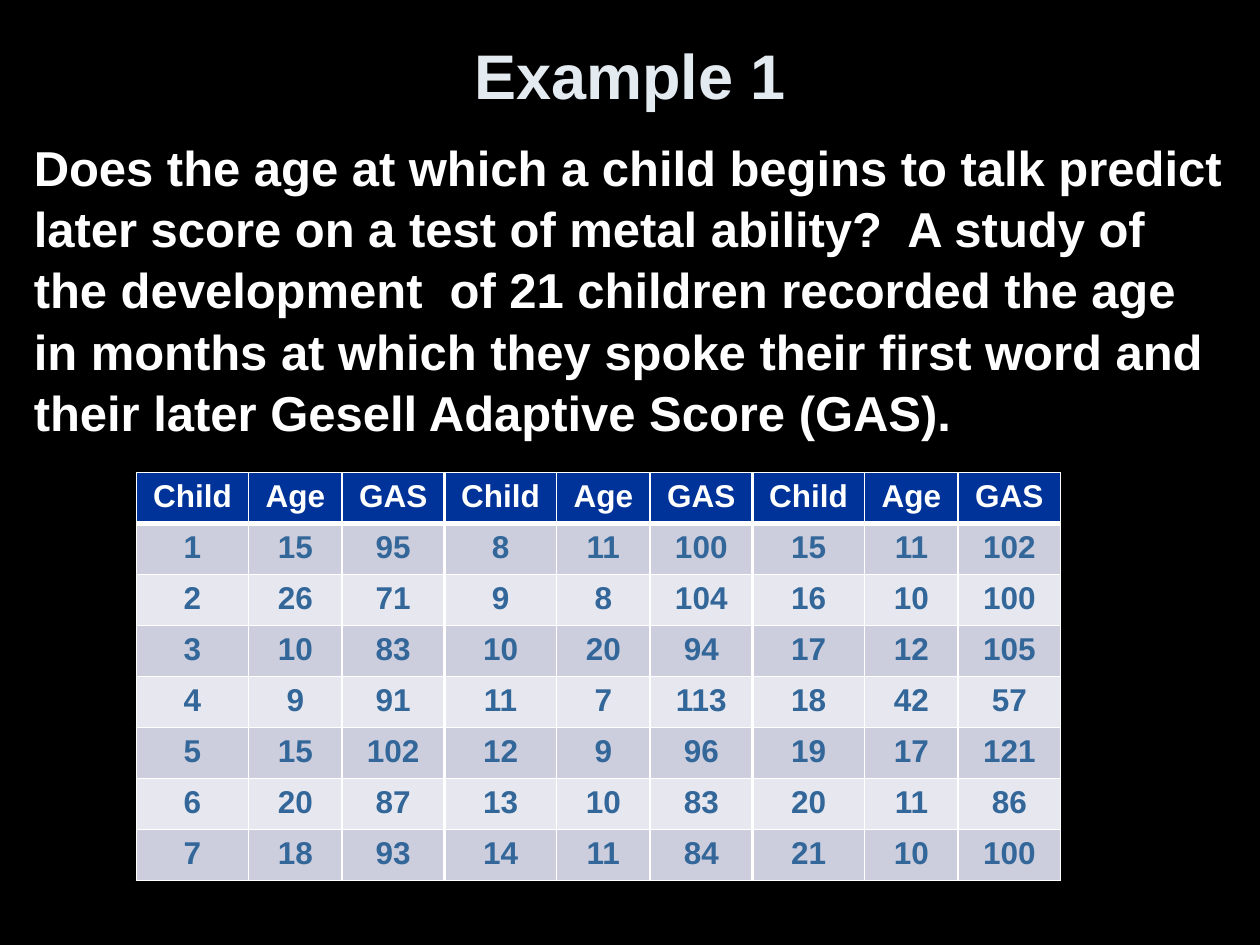
import dataclasses

import lxml.etree
import pptx
import pptx.dml.color
import pptx.enum.text
import pptx.oxml.ns
import pptx.util

Pt = pptx.util.Pt
Align = pptx.enum.text.PP_ALIGN
Anchor = pptx.enum.text.MSO_ANCHOR

WHITE = "FFFFFF"
HEADER_FILL = "003399"
NUMBER_COLOR = "336699"
BAND_FILLS = ("E7E8EF", "CCCEDE")
HEADINGS = ("Child", "Age", "GAS")
COLUMN_WIDTHS = (64.2, 53.4, 58.5)
GROUPS = 3
ROW_HEIGHT = 29.16
AGES = (15, 26, 10, 9, 15, 20, 18, 11, 8, 20, 7, 9, 10, 11, 11, 10, 12, 42, 17, 11, 10)
SCORES = (95, 71, 83, 91, 102, 87, 93, 100, 104, 94, 113, 96, 83, 84,
          102, 100, 105, 57, 121, 86, 100)
QUESTION = (
    "Does the age at which a child begins to talk predict later score on a test of "
    "metal ability?  A study of the development  of 21 children recorded the age in "
    "months at which they spoke their first word and their later Gesell Adaptive "
    "Score (GAS)."
)


@dataclasses.dataclass(frozen=True)
class TextBlock:
    text: str
    left: float
    top: float
    width: float
    height: float
    size: float
    color: str
    alignment: Align
    anchor: Anchor
    top_inset: float
    line_spacing: float


TEXT_BLOCKS = (
    TextBlock("Example 1", 36, 8.64, 648, 62.64, 36, "E3EBF1",
              Align.CENTER, Anchor.MIDDLE, 9, 1.0),
    TextBlock(QUESTION, 12.24, 72, 696.24, 228.24, 28, WHITE,
              Align.LEFT, Anchor.TOP, 5.3, 1.04),
)


def rgb(value: str) -> pptx.dml.color.RGBColor:
    return pptx.dml.color.RGBColor.from_string(value)


def write_run(paragraph, text: str, size: float, color: str, alignment: Align) -> None:
    paragraph.alignment = alignment
    run = paragraph.add_run()
    run.text = text
    run.font.name = "Arial"
    run.font.size = Pt(size)
    run.font.bold = True
    run.font.color.rgb = rgb(color)


def draw_text(slide, block: TextBlock) -> None:
    shape = slide.shapes.add_textbox(
        Pt(block.left), Pt(block.top), Pt(block.width), Pt(block.height))
    frame = shape.text_frame
    frame.word_wrap = True
    frame.vertical_anchor = block.anchor
    frame.margin_top = Pt(block.top_inset)
    paragraph = frame.paragraphs[0]
    paragraph.line_spacing = block.line_spacing
    write_run(paragraph, block.text, block.size, block.color, block.alignment)


def set_border(cell, side: str, width: float) -> None:
    qualify = pptx.oxml.ns.qn
    properties = cell._tc.get_or_add_tcPr()
    line = lxml.etree.SubElement(properties, qualify(f"a:ln{side}"), w=str(int(Pt(width))))
    fill = lxml.etree.SubElement(line, qualify("a:solidFill"))
    lxml.etree.SubElement(fill, qualify("a:srgbClr"), val=WHITE)


def draw_cell(cell, text: str, row: int, column: int) -> None:
    group_size = len(HEADINGS)
    starts_group = column > 0 and column % group_size == 0
    ends_group = (column + 1) % group_size == 0 and column + 1 < group_size * GROUPS
    set_border(cell, "L", 2.25 if starts_group else 1)
    set_border(cell, "R", 2.25 if ends_group else 1)
    set_border(cell, "T", 3 if row == 1 else 1)
    set_border(cell, "B", 3 if row == 0 else 1)
    cell.fill.solid()
    cell.fill.fore_color.rgb = rgb(BAND_FILLS[row % 2] if row else HEADER_FILL)
    write_run(cell.text_frame.paragraphs[0], text, 18,
              NUMBER_COLOR if row else WHITE, Align.CENTER)


def draw_table(slide) -> None:
    children = tuple(zip(range(1, len(AGES) + 1), AGES, SCORES))
    per_group = len(children) // GROUPS
    rows = [HEADINGS * GROUPS]
    for first in range(per_group):
        rows.append([value for child in children[first::per_group] for value in child])
    widths = COLUMN_WIDTHS * GROUPS
    table = slide.shapes.add_table(
        len(rows), len(widths), Pt(77.9), Pt(270),
        Pt(sum(widths)), Pt(ROW_HEIGHT * len(rows))).table
    for column, width in zip(table.columns, widths):
        column.width = Pt(width)
    for row_index, values in enumerate(rows):
        table.rows[row_index].height = Pt(ROW_HEIGHT)
        for column_index, value in enumerate(values):
            draw_cell(table.cell(row_index, column_index), str(value),
                      row_index, column_index)


def main() -> None:
    presentation = pptx.Presentation()
    presentation.slide_width = Pt(720)
    presentation.slide_height = Pt(540)
    slide = presentation.slides.add_slide(presentation.slide_layouts[6])
    slide.background.fill.solid()
    slide.background.fill.fore_color.rgb = rgb("000000")
    for block in TEXT_BLOCKS:
        draw_text(slide, block)
    draw_table(slide)
    presentation.save("out.pptx")


if __name__ == "__main__":
    main()
